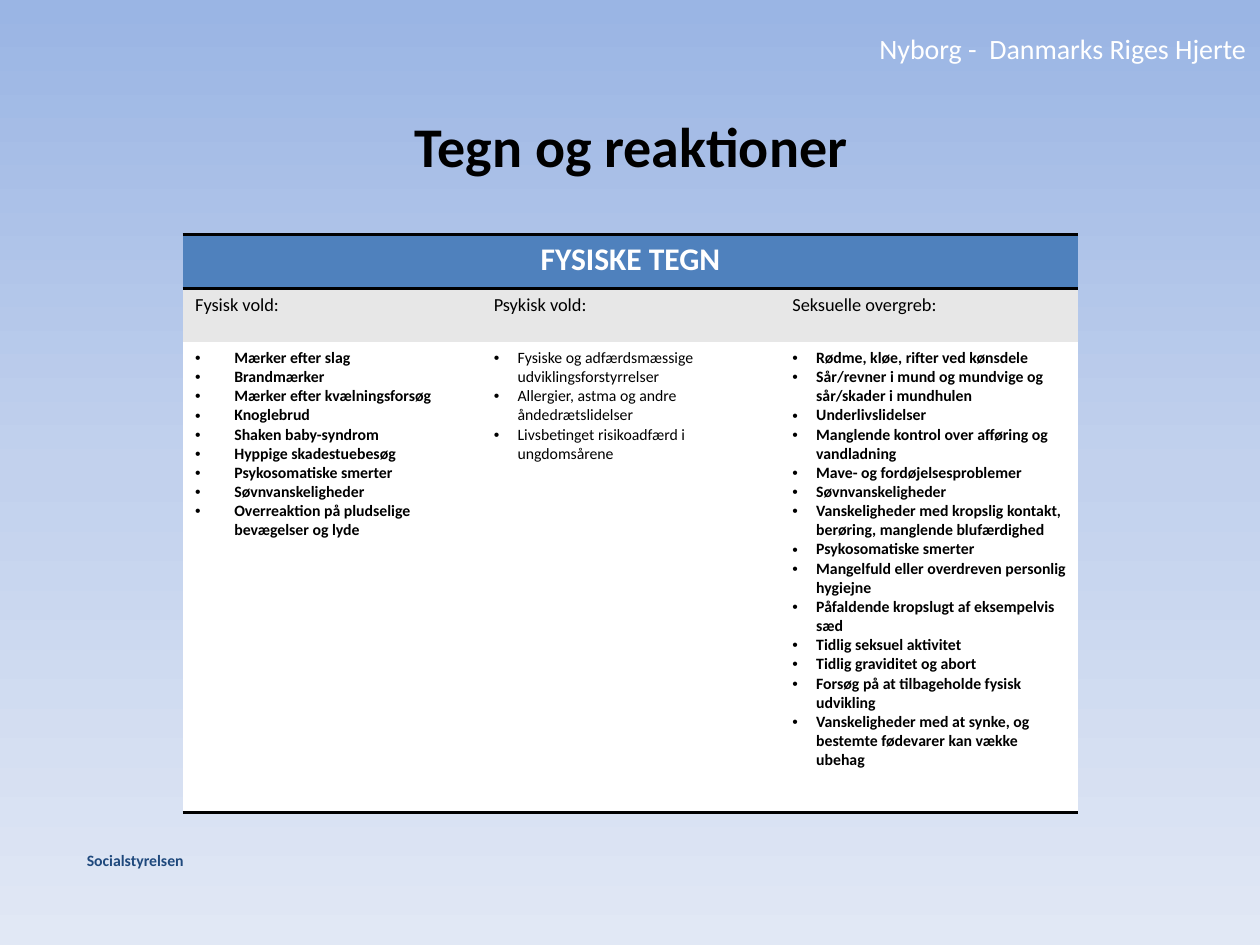
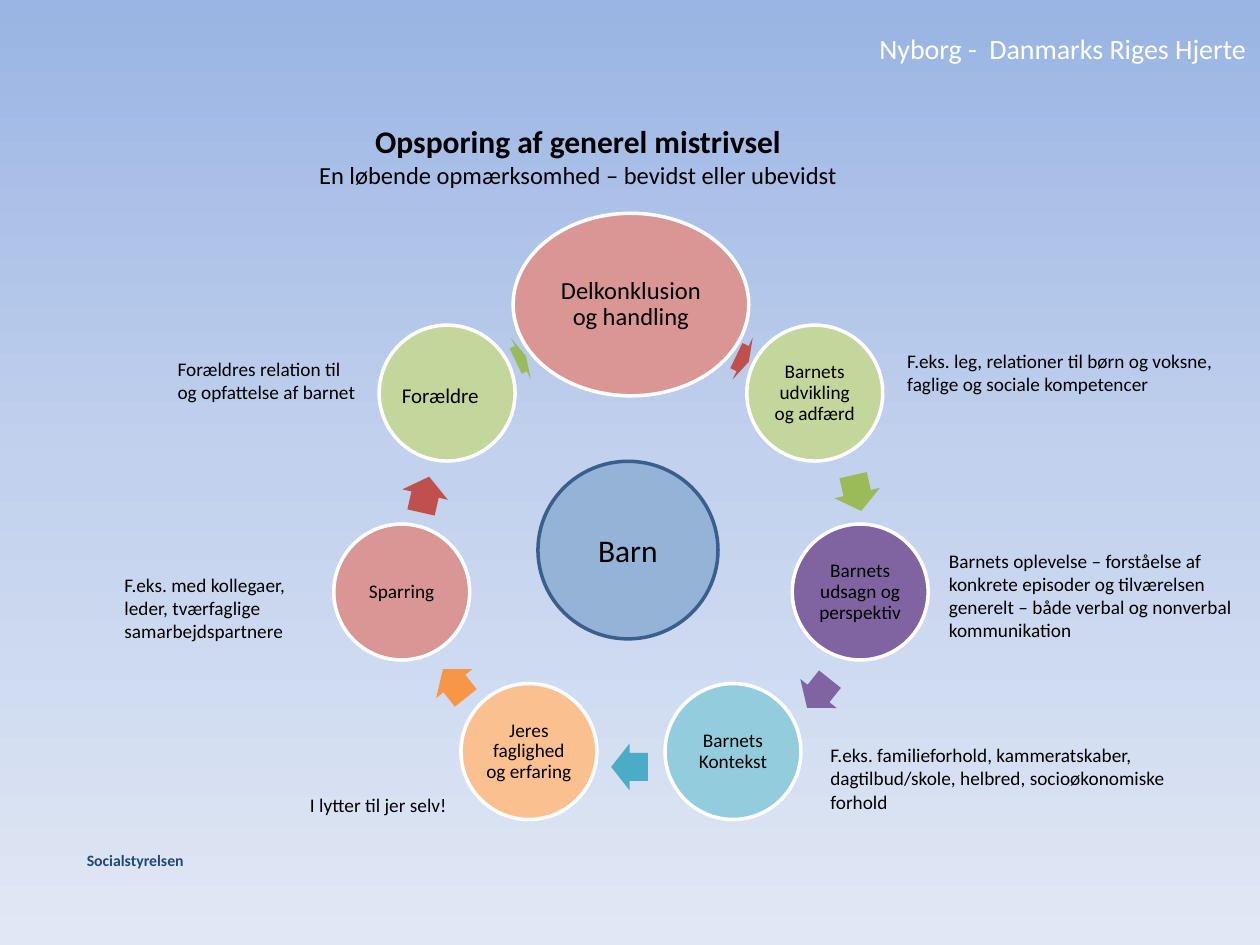
from copy import deepcopy
from math import cos, radians, sin

from lxml.etree import SubElement
from pptx import Presentation
from pptx.dml.color import RGBColor
from pptx.enum.shapes import MSO_SHAPE
from pptx.enum.text import MSO_ANCHOR, MSO_AUTO_SIZE, PP_ALIGN
from pptx.oxml.ns import qn
from pptx.util import Cm, Pt

FONT = "Calibri"
COLORS = {
    "black": "000000", "white": "FFFFFF", "navy": "1F497D",
    "sky_top": "9AB5E4", "sky_middle": "C2D1ED", "sky_bottom": "E1E8F5",
    "header": "4F81BD", "subheader": "E7E7E7",
    "red": "C0504D", "green": "9BBB59", "purple": "8064A2",
    "teal": "4BACC6", "orange": "F79646",
    "pale_red": "D99694", "pale_green": "C3D69B", "pale_teal": "93CDDD",
    "pale_orange": "FAC090", "pale_blue": "95B3D7", "blue_edge": "3A5F8C",
}
NO_STYLE = "{2D5ABB26-0587-4C30-8999-92F81FD0307C}"

SIGNS = [
    ("Fysisk vold:", True, 0.79, [
        "Mærker efter slag",
        "Brandmærker",
        "Mærker efter kvælningsforsøg",
        "Knoglebrud",
        "Shaken baby-syndrom",
        "Hyppige skadestuebesøg",
        "Psykosomatiske smerter",
        "Søvnvanskeligheder",
        "Overreaktion på pludselige bevægelser og lyde",
    ]),
    ("Psykisk vold:", False, 0.48, [
        "Fysiske og adfærdsmæssige udviklingsforstyrrelser",
        "Allergier, astma og andre åndedrætslidelser",
        "Livsbetinget risikoadfærd i ungdomsårene",
    ]),
    ("Seksuelle overgreb:", True, 0.48, [
        "Rødme, kløe, rifter ved kønsdele",
        "Sår/revner i mund og mundvige og sår/skader i mundhulen",
        "Underlivslidelser",
        "Manglende kontrol over afføring og vandladning",
        "Mave- og fordøjelsesproblemer",
        "Søvnvanskeligheder",
        "Vanskeligheder med kropslig kontakt, berøring, manglende blufærdighed",
        "Psykosomatiske smerter",
        "Mangelfuld eller overdreven personlig hygiejne",
        "Påfaldende kropslugt af eksempelvis sæd",
        "Tidlig seksuel aktivitet",
        "Tidlig graviditet og abort",
        "Forsøg på at tilbageholde fysisk udvikling",
        "Vanskeligheder med at synke, og bestemte fødevarer kan vække ubehag",
    ]),
]

RING_CENTER = (12.72, 10.88)
RING_RADIUS = 4.74
STAGES = [
    ("Delkonklusion og handling", "pale_red", 4.75, 3.68, 14),
    ("Barnets udvikling og adfærd", "pale_green", 2.74, 2.74, 11),
    ("Barnets udsagn og perspektiv", "purple", 2.74, 2.74, 11),
    ("Barnets\nKontekst", "pale_teal", 2.74, 2.74, 11),
    ("Jeres faglighed og erfaring", "pale_orange", 2.74, 2.74, 11),
    ("Sparring", "pale_red", 2.74, 2.74, 11),
    ("", "pale_green", 2.74, 2.74, 11),
]
ARROWS = [
    (14.97, 7.23, 0.28, "red"),
    (17.28, 9.94, 0.74, "green"),
    (16.5, 13.98, 0.74, "purple"),
    (12.69, 15.46, 0.74, "teal"),
    (9.16, 13.78, 0.74, "orange"),
    (8.57, 9.97, 0.74, "red"),
    (10.5, 7.23, 0.23, "green"),
]
NOTES = [
    (8.1, 7.72, 1.73, 12, "Forældre"),
    (18.29, 7.04, 6.86, 11,
     "F.eks. leg, relationer til børn og voksne,\nfaglige og sociale kompetencer"),
    (19.13, 11.07, 6.27, 11,
     "Barnets oplevelse – forståelse af\nkonkrete episoder og tilværelsen\n"
     "generelt – både verbal og nonverbal\nkommunikation"),
    (16.74, 14.99, 7.52, 11,
     "F.eks. familieforhold, kammeratskaber,\n"
     "dagtilbud/skole, helbred, socioøkonomiske\nforhold"),
    (6.25, 16, 2.9, 11, "I lytter til jer selv!"),
    (2.51, 11.56, 3.73, 11,
     "F.eks. med kollegaer,\nleder, tværfaglige\nsamarbejdspartnere"),
    (3.58, 7.21, 3.89, 11, "Forældres relation til\nog opfattelse af barnet"),
]


def rgb(name):
    return RGBColor.from_string(COLORS[name])


def style_font(font, size, color="black", bold=False):
    font.name = FONT
    font.size = Pt(size)
    font.bold = bold
    font.color.rgb = rgb(color)


def write(paragraph, text, size, color="black", bold=False, align=PP_ALIGN.LEFT):
    paragraph.text = text
    paragraph.alignment = align
    style_font(paragraph.font, size, color, bold)


def set_margins(frame, margin):
    frame.margin_left = frame.margin_right = Cm(margin)
    frame.margin_top = frame.margin_bottom = Cm(margin)


def add_text(page, left, top, width, height, text, size, margin=0, wrap=False, **style):
    box = page.shapes.add_textbox(Cm(left), Cm(top), Cm(width), Cm(height))
    frame = box.text_frame
    frame.word_wrap = wrap
    set_margins(frame, margin)
    write(frame.paragraphs[0], text, size, **style)


def paint_background(master):
    fill = master.background.fill
    fill.gradient()
    fill.gradient_angle = 270
    first = master.element.find(".//" + qn("a:gs"))
    first.addnext(deepcopy(first))
    names = ("sky_top", "sky_middle", "sky_bottom")
    for stop, name, position in zip(fill.gradient_stops, names, (0, 0.5, 1)):
        stop.color.rgb = rgb(name)
        stop.position = position


def add_page(deck, spans, left, top, width, height):
    page = deck.slides.add_slide(deck.slide_layouts[5])
    add_text(page, 0, 0.38, 25.37, 0.94, "Nyborg -  Danmarks Riges Hjerte", 16,
             margin=0.25, wrap=True, color="white", align=PP_ALIGN.RIGHT)
    add_text(page, 1.75, 17.15, 3, 0.38, "Socialstyrelsen", 9,
             wrap=True, color="navy", bold=True)
    title = page.shapes.title
    title.left, title.top, title.width, title.height = map(Cm, (left, top, width, height))
    frame = title.text_frame
    frame.auto_size = MSO_AUTO_SIZE.NONE
    frame.vertical_anchor = MSO_ANCHOR.TOP
    paragraph = frame.paragraphs[0]
    paragraph.alignment = PP_ALIGN.CENTER
    for index, (text, size, bold) in enumerate(spans):
        if index:
            paragraph.add_line_break()
        span = paragraph.add_run()
        span.text = text
        style_font(span.font, size, bold=bold)
    return page


def fill_cell(cell, color, edges=()):
    cell.fill.solid()
    cell.fill.fore_color.rgb = rgb(color)
    properties = cell._tc.get_or_add_tcPr()
    for index, edge in enumerate(edges):
        line = SubElement(properties, qn("a:" + edge), w=str(Pt(2)))
        solid = SubElement(line, qn("a:solidFill"))
        SubElement(solid, qn("a:srgbClr"), val=COLORS["black"])
        properties.insert(index, line)


def write_bullets(frame, items, bold, indent):
    for index, item in enumerate(items):
        paragraph = frame.add_paragraph() if index else frame.paragraphs[0]
        properties = paragraph._p.get_or_add_pPr()
        properties.set("marL", str(Cm(indent)))
        properties.set("indent", str(-Cm(indent)))
        SubElement(properties, qn("a:buFont"), typeface="Arial")
        SubElement(properties, qn("a:buChar"), char="•")
        write(paragraph, item, 9, bold=bold)


def add_signs_table(page):
    heights = (1.09, 1.09, 9.47)
    frame = page.shapes.add_table(3, 3, Cm(3.68), Cm(4.72), Cm(18.06), Cm(sum(heights)))
    table = frame.table
    table.first_row = table.horz_banding = False
    table._tbl.tblPr.find(qn("a:tableStyleId")).text = NO_STYLE
    for row, height in zip(table.rows, heights):
        row.height = Cm(height)
    for column, (kind, bold, indent, items) in enumerate(SIGNS):
        heading, subheading, body = (table.cell(row, column) for row in range(3))
        fill_cell(heading, "header", ("lnT", "lnB"))
        fill_cell(subheading, "subheader")
        fill_cell(body, "white", ("lnB",))
        write(subheading.text_frame.paragraphs[0], kind, 10.5)
        write_bullets(body.text_frame, items, bold, indent)
    table.cell(0, 0).merge(table.cell(0, 2))
    write(table.cell(0, 0).text_frame.paragraphs[0], "FYSISKE TEGN", 18,
          color="white", bold=True, align=PP_ALIGN.CENTER)


def add_centered_shape(page, kind, x, y, width, height, color, edge=None):
    shape = page.shapes.add_shape(kind, Cm(x - width / 2), Cm(y - height / 2),
                                  Cm(width), Cm(height))
    shape.shadow.inherit = False
    shape.fill.solid()
    shape.fill.fore_color.rgb = rgb(color)
    if edge:
        shape.line.color.rgb = rgb(edge)
        shape.line.width = Pt(2)
    else:
        shape.line.fill.background()
    return shape


def add_circle(page, x, y, width, height, color, edge, text, size, spacing):
    circle = add_centered_shape(page, MSO_SHAPE.OVAL, x, y, width, height, color, edge)
    if text:
        frame = circle.text_frame
        frame.word_wrap = True
        frame.vertical_anchor = MSO_ANCHOR.MIDDLE
        set_margins(frame, 0.05)
        write(frame.paragraphs[0], text, size, align=PP_ALIGN.CENTER)
        frame.paragraphs[0].line_spacing = spacing


def add_cycle(page):
    step = 360 / len(STAGES)
    for index, (text, color, width, height, size) in enumerate(STAGES):
        angle = radians(index * step)
        x = RING_CENTER[0] + RING_RADIUS * sin(angle)
        y = RING_CENTER[1] - RING_RADIUS * cos(angle)
        add_circle(page, x, y, width, height, color, "white", text, size, 0.9)
    for index, (x, y, width, color) in enumerate(ARROWS):
        arrow = add_centered_shape(page, MSO_SHAPE.RIGHT_ARROW, x, y, width, 0.94, color)
        arrow.adjustments[0] = 0.6
        arrow.adjustments[1] = 0.5
        arrow.rotation = (index + 0.5) * step
    add_circle(page, 12.66, 11.09, 3.63, 3.58, "pale_blue", "blue_edge", "Barn", 18, 1.0)


def main():
    deck = Presentation()
    deck.slide_width, deck.slide_height = Cm(25.4), Cm(19.05)
    paint_background(deck.slide_master)

    signs = add_page(deck, [("Tegn og reaktioner", 32, True)], 1.75, 2.13, 21.95, 2.11)
    add_signs_table(signs)

    cycle = add_page(deck, [
        ("Opsporing af generel mistrivsel", 18, True),
        ("En løbende opmærksomhed – bevidst eller ubevidst", 14, False),
    ], 1.75, 2.34, 19.81, 1.68)
    add_cycle(cycle)
    for left, top, width, size, text in NOTES:
        height = 0.47 * (text.count("\n") + 1)
        add_text(cycle, left, top, width, height, text, size)

    deck.save("out.pptx")


if __name__ == "__main__":
    main()
